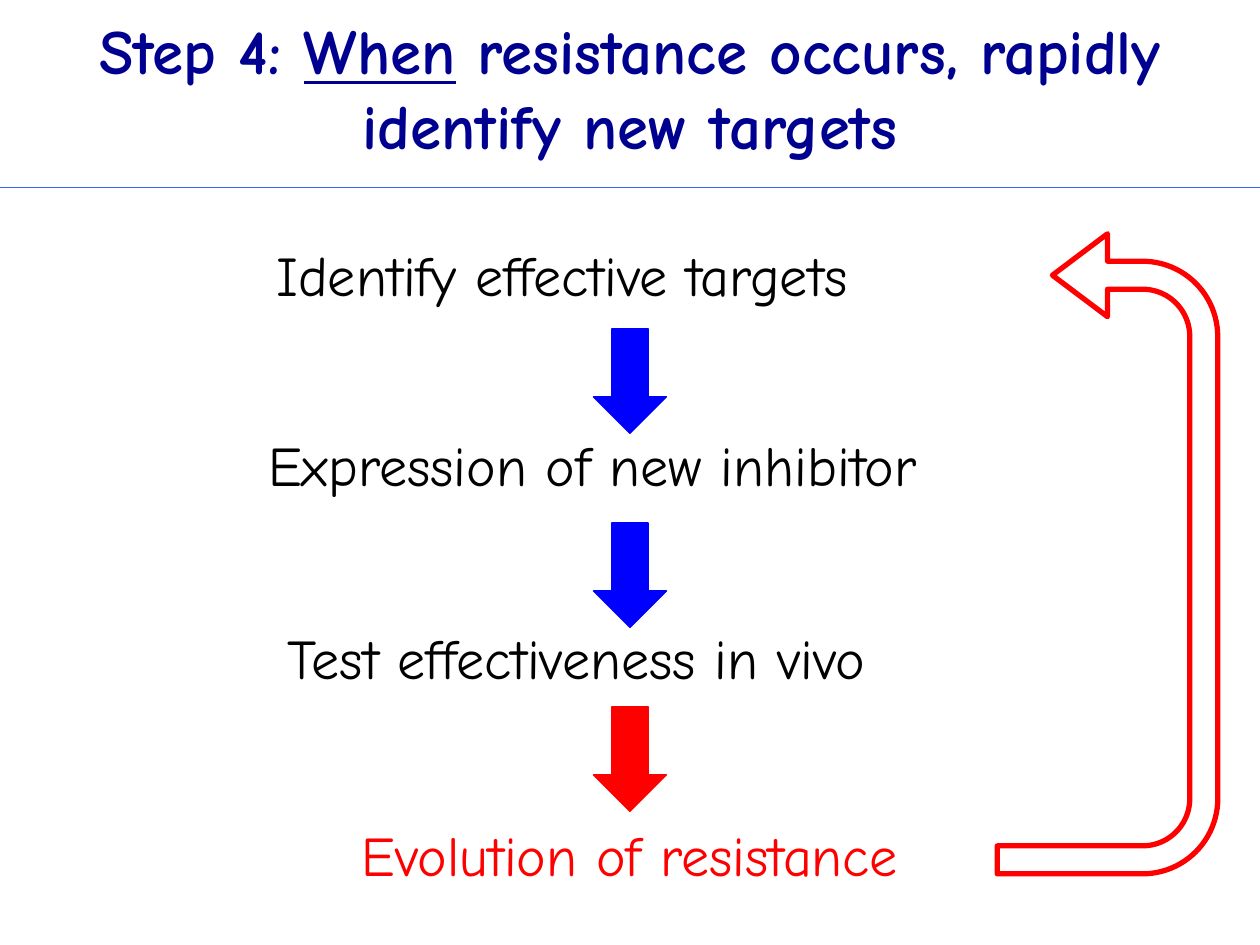
from pptx import Presentation
from pptx.dml.color import RGBColor
from pptx.enum.shapes import MSO_CONNECTOR, MSO_SHAPE
from pptx.enum.text import MSO_AUTO_SIZE, PP_ALIGN
from pptx.oxml.ns import qn
from pptx.util import Inches, Pt
from lxml import etree

DOWN, UTURN = MSO_SHAPE.DOWN_ARROW, MSO_SHAPE.U_TURN_ARROW
STRAIGHT = MSO_CONNECTOR.STRAIGHT
LEFT, CENTER = PP_ALIGN.LEFT, PP_ALIGN.CENTER
GROW = MSO_AUTO_SIZE.SHAPE_TO_FIT_TEXT

FONT = "Comic Neue"
COLORS = {"title": "000090", "text": "000000", "blue": "0000FF",
          "red": "FF0000", "rule": "3366FF"}
WIDTH, HEIGHT = 10, 7.5
MID = WIDTH / 2

# Content: title runs are (text, underlined)
TITLE = [("Step 4: ", False), ("When", True),
         (" resistance occurs, rapidly identify new targets", False)]
# Steps: text, top, width, color, alignment
STEPS = [
    ("Identify effective targets", 1.86, 5.81, "text", LEFT),
    ("Expression of new inhibitor", 3.37, 5.94, "text", LEFT),
    ("Test effectiveness in vivo", 4.9, 5.64, "text", LEFT),
    ("Evolution of resistance", 6.46, 5.01, "red", CENTER),
]
# Arrows between steps: top, color
ARROWS = [(2.61, "blue"), (4.15, "blue"), (5.61, "red")]
ARROW_W, ARROW_H = 0.58, 0.83
LOOP_BOX = (6.25, 3.52, 5.08, 1.75)
LOOP_ADJ = (0.127, 0.188, 0.25, 0.341, 0.75)
RULE_Y = 1.49


def rgb(name):
    return RGBColor.from_string(COLORS[name])


def add_text(slide, runs, box, size=32, color="text", bold=False,
             align=LEFT, wrap=False, before=0, after=0):
    frame = slide.shapes.add_textbox(*map(Inches, box)).text_frame
    frame.word_wrap = wrap
    frame.auto_size = GROW
    para = frame.paragraphs[0]
    para.alignment = align
    para.space_before, para.space_after = Pt(before), Pt(after)
    for text, under in runs:
        run = para.add_run()
        run.text = text
        font = run.font
        font.name, font.size, font.bold = FONT, Pt(size), bold
        font.underline = under
        font.color.rgb = rgb(color)


def add_arrow(slide, kind, box, color, weight, adjust, fill=True):
    shape = slide.shapes.add_shape(kind, *map(Inches, box))
    shape.shadow.inherit = False
    for i, value in enumerate(adjust):
        shape.adjustments[i] = value
    if fill:
        shape.fill.solid()
        shape.fill.fore_color.rgb = rgb(color)
    else:
        shape.fill.background()
    shape.line.color.rgb = rgb(color)
    shape.line.width = Pt(weight)
    return shape


def main():
    deck = Presentation()
    deck.slide_width, deck.slide_height = Inches(WIDTH), Inches(HEIGHT)
    slide = deck.slides.add_slide(deck.slide_layouts[6])

    # Steps, centred on the slide
    for text, top, width, color, align in STEPS:
        add_text(slide, [(text, False)], (MID - width / 2, top, width, 0.64),
                 color=color, align=align)

    # Arrows from step to step
    for top, color in ARROWS:
        add_arrow(slide, DOWN, (MID - ARROW_W / 2, top, ARROW_W, ARROW_H),
                  color, 0.75, (0.5, 0.5))

    # Loop back to the first step
    loop = add_arrow(slide, UTURN, LOOP_BOX, "red", 3, LOOP_ADJ, fill=False)
    loop.rotation = 90
    loop.element.spPr.find(qn("a:xfrm")).set("flipH", "1")

    # Rule under the title
    rule = slide.shapes.add_connector(
        STRAIGHT, 0, Inches(RULE_Y), Inches(WIDTH), Inches(RULE_Y))
    rule.line.color.rgb = rgb("rule")
    rule.line.width = Pt(0.75)
    etree.SubElement(rule.element.spPr, qn("a:effectLst"))

    # Title
    add_text(slide, TITLE, (0, 0.04, WIDTH, 1.31), size=36, color="title",
             bold=True, align=CENTER, wrap=True, before=24, after=12)

    deck.save("out.pptx")


if __name__ == "__main__":
    main()
